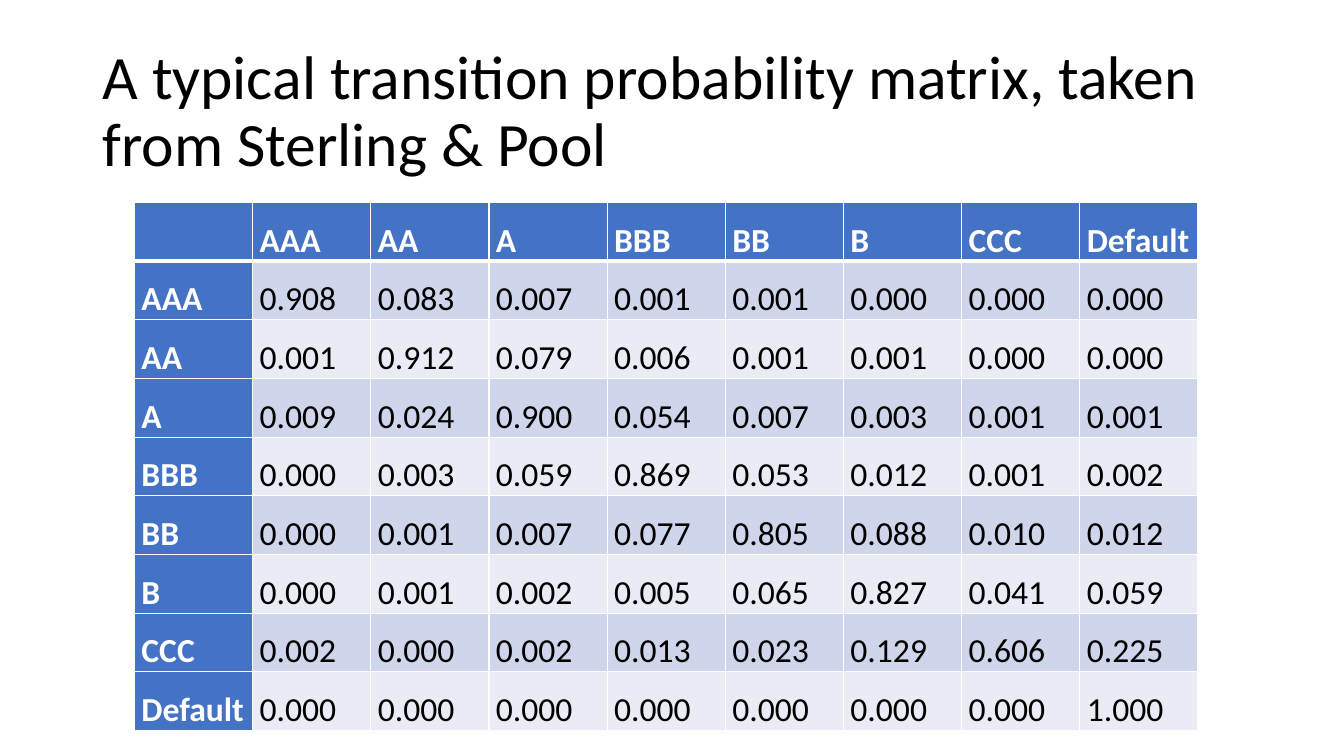
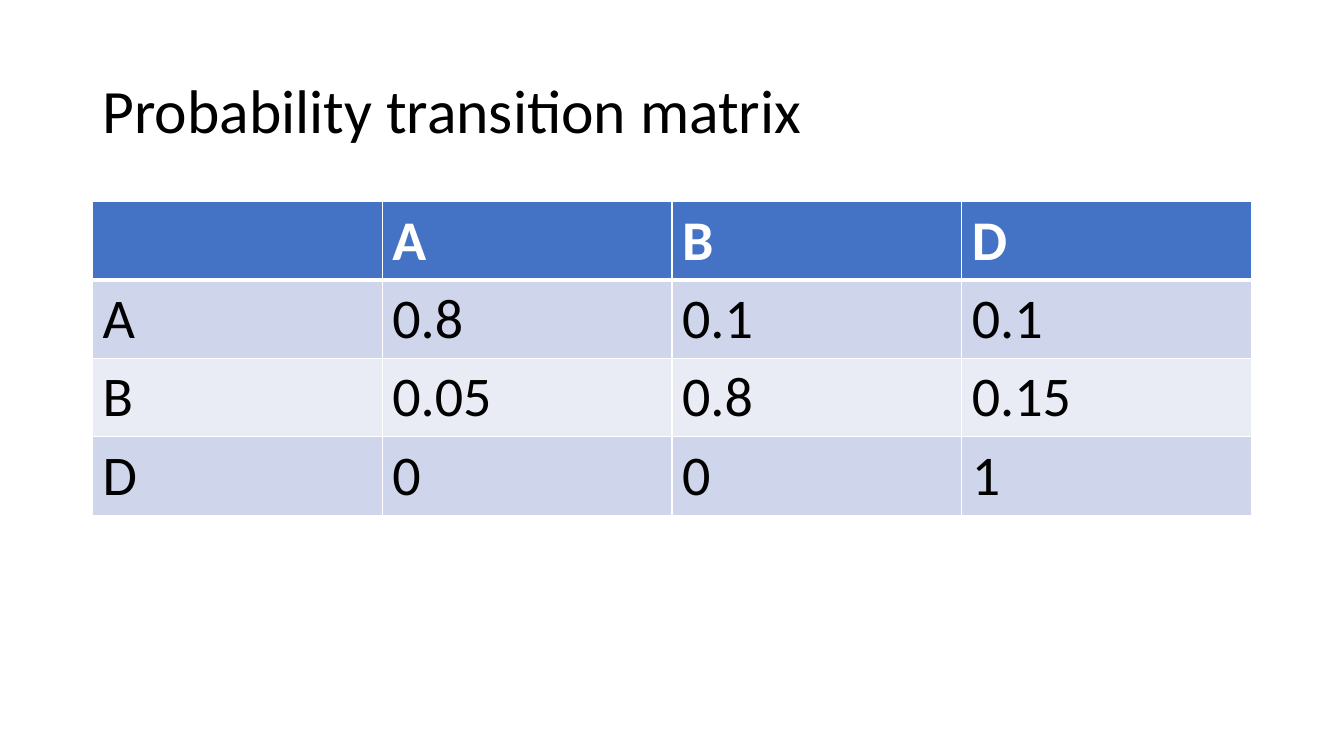
"""Build two slides showing credit rating transition probability matrices."""
from dataclasses import dataclass

from lxml.etree import SubElement
from pptx import Presentation
from pptx.dml.color import RGBColor
from pptx.enum.text import MSO_ANCHOR, MSO_AUTO_SIZE, PP_ALIGN
from pptx.oxml.ns import qn
from pptx.slide import Slide
from pptx.table import _Cell
from pptx.text.text import _Paragraph
from pptx.util import Inches, Pt

SLIDE_WIDTH = Inches(13.33)
SLIDE_HEIGHT = Inches(7.5)
TITLE_ONLY_LAYOUT = 5
FONT_NAME = "Calibri"
COLORS = {
    "header": "4472C4",
    "odd_row": "CFD5EA",
    "even_row": "E9EBF5",
    "light": "FFFFFF",
    "dark": "000000",
}


@dataclass(frozen=True)
class Box:
    """A rectangle in percent of the slide's width and height."""

    left: float
    top: float
    width: float
    height: float

    def lengths(self) -> tuple[int, int, int, int]:
        """Return left, top, width and height as slide lengths."""
        return (
            int(SLIDE_WIDTH * self.left / 100),
            int(SLIDE_HEIGHT * self.top / 100),
            int(SLIDE_WIDTH * self.width / 100),
            int(SLIDE_HEIGHT * self.height / 100),
        )


@dataclass(frozen=True)
class CellStyle:
    """Text settings shared by all cells of a matrix."""

    font_size: int
    anchor: MSO_ANCHOR = MSO_ANCHOR.TOP
    side_margin: float = 0.1
    end_margin: float = 0.05
    line_spacing: float = 1.0
    space_after: int = 0


@dataclass(frozen=True)
class MatrixSlide:
    """A title above a square matrix whose states label rows and columns."""

    title: str
    states: tuple[str, ...]
    values: tuple[str, ...]
    box: Box
    style: CellStyle
    header_column: bool

    def rows(self) -> list[list[str]]:
        """Return the header row and the labelled rows of values."""
        labelled = zip(self.states, self.values)
        return [["", *self.states]] + [
            [state, *line.split()] for state, line in labelled
        ]


TITLE_BOX = Box(6.88, 5.32, 86.25, 19.33)
MATRIX_SLIDES = (
    MatrixSlide(
        title="A typical transition probability matrix, taken from Sterling & Pool",
        states=("AAA", "AA", "A", "BBB", "BB", "B", "CCC", "Default"),
        values=(
            "0.908 0.083 0.007 0.001 0.001 0.000 0.000 0.000",
            "0.001 0.912 0.079 0.006 0.001 0.001 0.000 0.000",
            "0.009 0.024 0.900 0.054 0.007 0.003 0.001 0.001",
            "0.000 0.003 0.059 0.869 0.053 0.012 0.001 0.002",
            "0.000 0.001 0.007 0.077 0.805 0.088 0.010 0.012",
            "0.000 0.001 0.002 0.005 0.065 0.827 0.041 0.059",
            "0.002 0.000 0.002 0.013 0.023 0.129 0.606 0.225",
            "0.000 0.000 0.000 0.000 0.000 0.000 0.000 1.000",
        ),
        box=Box(10, 26.8, 79.15, 69.85),
        style=CellStyle(24, MSO_ANCHOR.BOTTOM, 0.07, 0, 1.07, 8),
        header_column=True,
    ),
    MatrixSlide(
        title="Probability transition matrix",
        states=("A", "B", "D"),
        values=("0.8 0.1 0.1", "0.05 0.8 0.15", "0 0 1"),
        box=Box(6.88, 26.7, 86.25, 41.4),
        style=CellStyle(40),
        header_column=False,
    ),
)


def format_font(paragraph: _Paragraph, size: int, color: str, bold: bool = False) -> None:
    """Set the font of a whole paragraph."""
    font = paragraph.font
    font.name = FONT_NAME
    font.size = Pt(size)
    font.bold = bold
    font.color.rgb = RGBColor.from_string(COLORS[color])


def add_title(slide: Slide, text: str) -> None:
    """Place and format the slide's title placeholder."""
    title = slide.shapes.title
    title.left, title.top, title.width, title.height = TITLE_BOX.lengths()
    frame = title.text_frame
    frame.text = text
    frame.word_wrap = True
    frame.auto_size = MSO_AUTO_SIZE.NONE
    frame.vertical_anchor = MSO_ANCHOR.MIDDLE
    paragraph = frame.paragraphs[0]
    paragraph.alignment = PP_ALIGN.LEFT
    paragraph.line_spacing = 0.9
    format_font(paragraph, 44, "dark")


def add_borders(cell: _Cell, row: int) -> None:
    """Draw light cell borders, thicker between header row and body."""
    widths = {
        "a:lnL": 1,
        "a:lnR": 1,
        "a:lnT": 3 if row == 1 else 1,
        "a:lnB": 3 if row == 0 else 1,
    }
    properties = cell._tc.get_or_add_tcPr()
    for tag, width in widths.items():
        line = SubElement(properties, qn(tag), w=str(Pt(width)))
        fill = SubElement(line, qn("a:solidFill"))
        SubElement(fill, qn("a:srgbClr"), val=COLORS["light"])


def format_cell(cell: _Cell, text: str, row: int, is_header: bool, style: CellStyle) -> None:
    """Write one cell and set its borders, fill and text."""
    add_borders(cell, row)
    band = "odd_row" if row % 2 else "even_row"
    cell.fill.solid()
    cell.fill.fore_color.rgb = RGBColor.from_string(
        COLORS["header" if is_header else band]
    )
    cell.vertical_anchor = style.anchor
    cell.margin_left = cell.margin_right = Inches(style.side_margin)
    cell.margin_top = cell.margin_bottom = Inches(style.end_margin)
    cell.text = text
    paragraph = cell.text_frame.paragraphs[0]
    paragraph.line_spacing = style.line_spacing
    paragraph.space_after = Pt(style.space_after)
    format_font(paragraph, style.font_size, "light" if is_header else "dark", is_header)


def add_matrix(slide: Slide, matrix: MatrixSlide) -> None:
    """Add the matrix as a table with equal rows and columns."""
    rows = matrix.rows()
    size = len(rows)
    table = slide.shapes.add_table(size, size, *matrix.box.lengths()).table
    table.first_col = matrix.header_column
    for row, texts in enumerate(rows):
        for column, text in enumerate(texts):
            is_header = row == 0 or (matrix.header_column and column == 0)
            format_cell(table.cell(row, column), text, row, is_header, matrix.style)


def main() -> None:
    """Build and save the presentation."""
    presentation = Presentation()
    presentation.slide_width = SLIDE_WIDTH
    presentation.slide_height = SLIDE_HEIGHT
    layout = presentation.slide_layouts[TITLE_ONLY_LAYOUT]
    for matrix in MATRIX_SLIDES:
        slide = presentation.slides.add_slide(layout)
        add_title(slide, matrix.title)
        add_matrix(slide, matrix)
    presentation.save("out.pptx")


if __name__ == "__main__":
    main()
